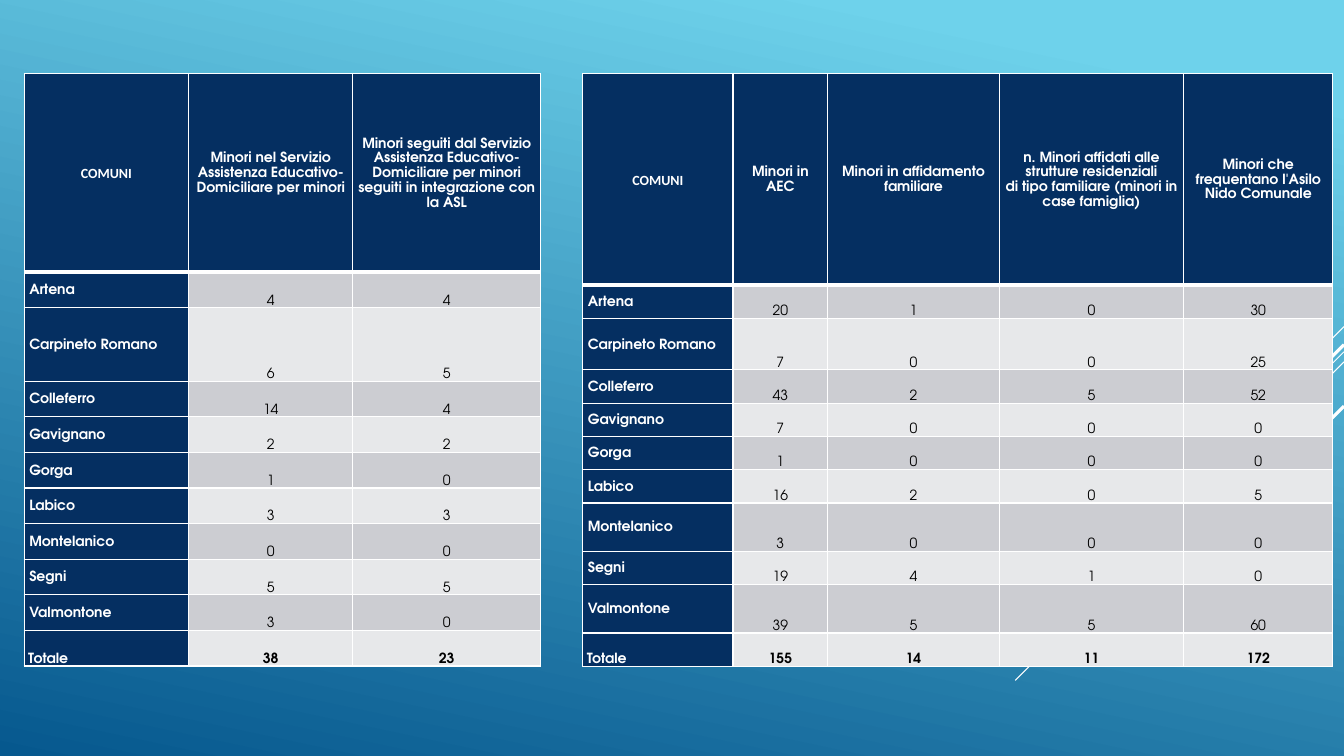
from lxml.etree import SubElement
from pptx import Presentation
from pptx.dml.color import RGBColor
from pptx.enum.shapes import MSO_CONNECTOR
from pptx.enum.text import MSO_ANCHOR as ANCHOR, PP_ALIGN as ALIGN
from pptx.oxml.ns import qn
from pptx.util import Inches, Pt

NAVY, WHITE, BLACK = "052F61", "FFFFFF", "000000"
BANDS = ("E7E8EA", "CCCDD2")
FONT = "TeX Gyre Adventor"
TOWNS = ["Artena", "Carpineto Romano", "Colleferro", "Gavignano", "Gorga",
         "Labico", "Montelanico", "Segni", "Valmontone", "Totale"]

# x1, y1, x2, y2, width in points
RAYS = [
    (13.33, 3.24, 12.33, 4.24, 0.75),
    (13.33, 3.49, 10.07, 6.75, 0.75),
    (13.33, 3.59, 11.26, 5.67, 0.75),
    (13.33, 3.42, 11.42, 5.33, 2.25),
    (13.33, 4.03, 11.94, 5.42, 2.25),
]

ROW = (5.88 - 1.97 - 0.73) / 9
HOME_CARE = {
    "left": 0.24,
    "widths": [1.63, 1.63, 1.86],
    "heights": [1.97, ROW, 0.73] + [ROW] * 8,
    "headers": [
        "COMUNI",
        "Minori nel Servizio Assistenza Educativo-Domiciliare per minori",
        "Minori seguiti dal Servizio Assistenza Educativo-Domiciliare "
        "per minori seguiti in integrazione con la ASL",
    ],
    "columns": [
        [4, 6, 14, 2, 1, 3, 0, 5, 3, 38],
        [4, 5, 4, 2, 0, 3, 0, 5, 0, 23],
    ],
}
OTHER_SERVICES = {
    "left": 5.78,
    "widths": [1.49, 0.94, 1.7, 1.83, 1.48],
    "heights": [2.1, 0.33, 0.51, 0.33, 0.33, 0.33, 0.33, 0.48, 0.33, 0.48, 0.33],
    "headers": [
        "COMUNI",
        "Minori in AEC",
        "Minori in affidamento familiare",
        "n. Minori affidati alle strutture residenziali\n"
        "di tipo familiare (minori in case famiglia)",
        "Minori che frequentano l'Asilo Nido Comunale",
    ],
    "columns": [
        [20, 7, 43, 7, 1, 16, 3, 19, 39, 155],
        [1, 0, 2, 0, 0, 2, 0, 4, 5, 14],
        [0, 0, 5, 0, 0, 0, 0, 1, 5, 11],
        [30, 25, 52, 0, 0, 5, 0, 0, 60, 172],
    ],
}


def rgb(color):
    return RGBColor.from_string(color)


def set_attrs(obj, values):
    for name, value in values.items():
        setattr(obj, name, value)


def paint_background(s):
    fill = s.background.fill
    fill.gradient()
    fill.gradient_angle = 360 - 102
    for stop, (position, color) in zip(fill.gradient_stops,
                                       [(0.1, "6ED2EB"), (1, "06588E")]):
        stop.position = position
        stop.color.rgb = rgb(color)


def add_ray(s, x1, y1, x2, y2, width):
    ray = s.shapes.add_connector(MSO_CONNECTOR.STRAIGHT,
                                 *map(Inches, (x1, y1, x2, y2)))
    ray.line.color.rgb = rgb(WHITE)
    ray.line.width = Pt(width)
    SubElement(ray._element.spPr, qn("a:effectLst"))


def set_borders(cell, widths):
    """Draw white borders; widths maps the sides L, R, T, B to points."""
    tc_pr = cell._tc.get_or_add_tcPr()
    for side, width in widths.items():
        ln = SubElement(tc_pr, qn(f"a:ln{side}"), w=str(Pt(width)))
        SubElement(SubElement(ln, qn("a:solidFill")), qn("a:srgbClr"), val=WHITE)


def write_cell(cell, text, fill, color, bold, align, anchor, inset, font=FONT):
    set_attrs(cell, {
        "vertical_anchor": anchor,
        "margin_left": Inches(inset), "margin_right": Inches(inset),
        "margin_top": 0, "margin_bottom": 0,
    })
    cell.fill.solid()
    cell.fill.fore_color.rgb = rgb(fill)
    p = cell.text_frame.paragraphs[0]
    p.text = text
    set_attrs(p, {"alignment": align, "line_spacing": 1.15, "space_after": Pt(10)})
    for r in p.runs:
        set_attrs(r.font, {"size": Pt(10), "name": font, "bold": bold})
        r.font.color.rgb = rgb(color)


def cell_format(row, col):
    """Choose the look of a cell: header, town name, figure or total."""
    total = row == len(TOWNS)
    if row == 0:
        return {"fill": NAVY, "color": WHITE, "bold": True, "align": ALIGN.CENTER,
                "anchor": ANCHOR.MIDDLE, "inset": 0.04,
                "font": FONT if col else "Calibri"}
    if col == 0:
        return {"fill": NAVY, "color": WHITE, "bold": True, "align": ALIGN.LEFT,
                "anchor": ANCHOR.BOTTOM if total else ANCHOR.MIDDLE,
                "inset": 0.04 if total else 0.05}
    return {"fill": BANDS[row % 2], "color": BLACK, "bold": total,
            "align": ALIGN.CENTER, "anchor": ANCHOR.BOTTOM, "inset": 0.04}


def add_town_table(s, left, widths, heights, headers, columns):
    rows = [headers, *zip(TOWNS, *columns)]
    frame = s.shapes.add_table(len(rows), len(widths), Inches(left), Inches(0.73),
                               Inches(sum(widths)), Inches(sum(heights)))
    table = frame.table
    set_attrs(table, {"first_row": False, "horz_banding": False})
    for column, width in zip(table.columns, widths):
        column.width = Inches(width)
    for i, (height, values) in enumerate(zip(heights, rows)):
        table.rows[i].height = Inches(height)
        for j, value in enumerate(values):
            cell = table.cell(i, j)
            set_borders(cell, {"L": 1, "R": 1, "T": 3 if i == 1 else 1,
                               "B": 3 if i == 0 else 1})
            write_cell(cell, str(value), **cell_format(i, j))


def main():
    prs = Presentation()
    set_attrs(prs, {"slide_width": Inches(13.33), "slide_height": Inches(7.5)})
    s = prs.slides.add_slide(prs.slide_layouts[6])
    paint_background(s)
    for ray in RAYS:
        add_ray(s, *ray)
    for content in (HOME_CARE, OTHER_SERVICES):
        add_town_table(s, **content)
    prs.save("out.pptx")


if __name__ == "__main__":
    main()
